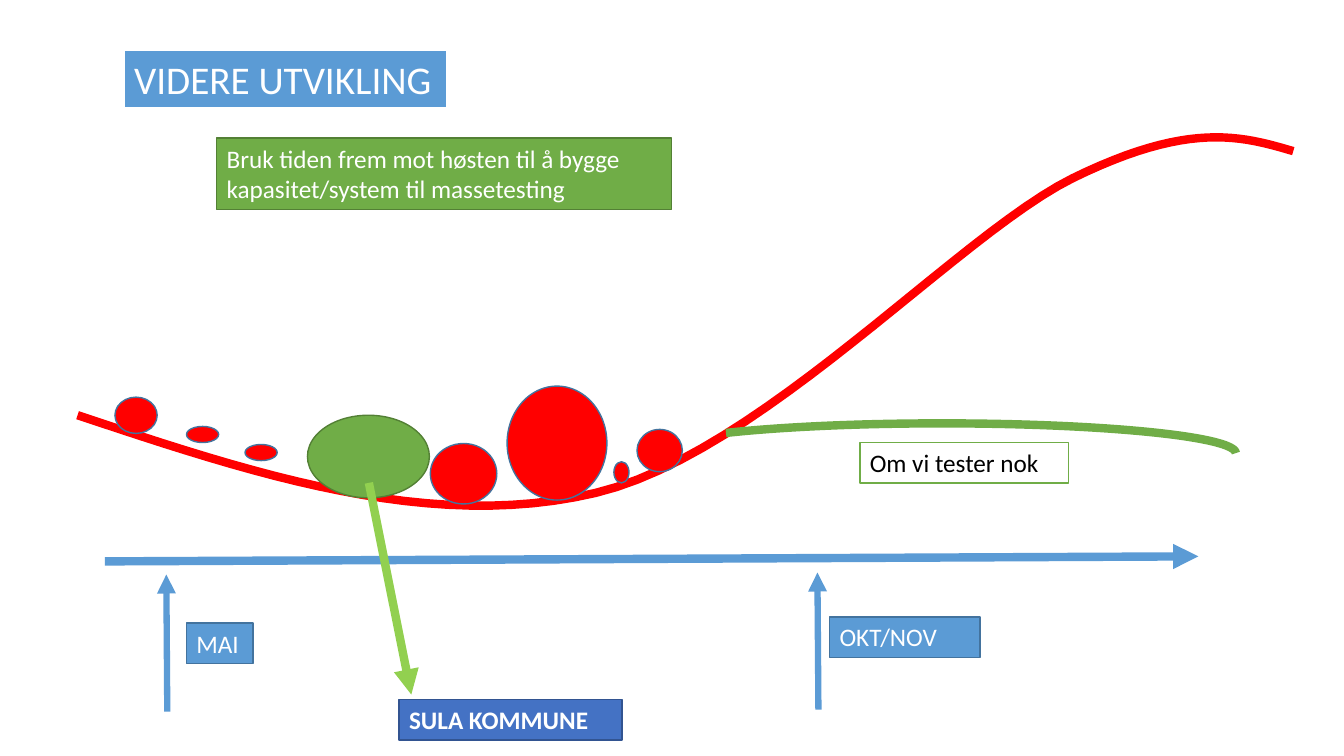
from dataclasses import dataclass

from lxml.etree import SubElement
from pptx import Presentation
from pptx.dml.color import RGBColor
from pptx.enum.shapes import MSO_CONNECTOR, MSO_SHAPE
from pptx.enum.text import MSO_ANCHOR, MSO_AUTO_SIZE, PP_ALIGN
from pptx.oxml.ns import qn
from pptx.util import Pt


@dataclass(frozen=True)
class Theme:
    font: str = "Calibri"
    title_size: float = 28
    label_size: float = 18
    white: str = "FFFFFF"
    black: str = "000000"
    blue: str = "5B9BD5"
    blue_edge: str = "43739E"
    green: str = "70AD47"
    green_edge: str = "538035"
    lime: str = "92D050"
    red: str = "FF0000"
    navy: str = "4472C4"
    navy_edge: str = "325491"
    thin: float = 1
    frame: float = 1.5
    medium: float = 4.5
    thick: float = 6


def bezier_point(start, first, second, end, t):
    weights = ((1 - t) ** 3, 3 * t * (1 - t) ** 2, 3 * t**2 * (1 - t), t**3)
    corners = (start, first, second, end)
    return tuple(Pt(sum(w * c[axis] for w, c in zip(weights, corners))) for axis in (0, 1))


class Page:
    def __init__(self, deck, theme):
        self.theme = theme
        self.slide = deck.slides.add_slide(deck.slide_layouts[5])
        self.shapes = self.slide.shapes

    def outline(self, item, color, width):
        item.line.color.rgb = RGBColor.from_string(color)
        item.line.width = Pt(width)

    def paint(self, shape, fill, edge, width):
        shape.shadow.inherit = False
        if fill:
            shape.fill.solid()
            shape.fill.fore_color.rgb = RGBColor.from_string(fill)
        else:
            shape.fill.background()
        self.outline(shape, edge, width)

    def set_text(self, shape, text, size, color, bold=False):
        frame = shape.text_frame
        frame.text = text
        frame.word_wrap = True
        frame.auto_size = MSO_AUTO_SIZE.NONE
        frame.vertical_anchor = MSO_ANCHOR.TOP
        para = frame.paragraphs[0]
        para.alignment = PP_ALIGN.LEFT
        para.line_spacing = 1.0
        para.font.name = self.theme.font
        para.font.size = Pt(size)
        para.font.bold = bold
        para.font.color.rgb = RGBColor.from_string(color)

    def title(self, text, left, top, width, height):
        box = self.shapes.title
        box.left, box.top, box.width, box.height = map(Pt, (left, top, width, height))
        theme = self.theme
        box.fill.solid()
        box.fill.fore_color.rgb = RGBColor.from_string(theme.blue)
        self.outline(box, theme.white, theme.frame)
        self.set_text(box, text, theme.title_size, theme.white)

    def label(self, text, bounds, fill, edge, color, bold=False):
        box = self.shapes.add_shape(MSO_SHAPE.RECTANGLE, *map(Pt, bounds))
        self.paint(box, fill, edge, self.theme.thin)
        self.set_text(box, text, self.theme.label_size, color, bold)

    def ellipse(self, bounds, fill, edge):
        oval = self.shapes.add_shape(MSO_SHAPE.OVAL, *map(Pt, bounds))
        self.paint(oval, fill, edge, self.theme.thin)

    def arrow(self, start, end, color, width):
        line = self.shapes.add_connector(MSO_CONNECTOR.STRAIGHT, *map(Pt, start + end))
        self.outline(line, color, width)
        SubElement(line.get_or_add_ln(), qn("a:tailEnd"), type="triangle")
        SubElement(line._element.spPr, qn("a:effectLst"))

    def curve(self, start, segments, color, width, steps=24):
        builder = self.shapes.build_freeform(*map(Pt, start))
        points = []
        for first, second, end in segments:
            points += [bezier_point(start, first, second, end, step / steps)
                       for step in range(1, steps + 1)]
            start = end
        builder.add_line_segments(points, close=False)
        self.paint(builder.convert_to_shape(), None, color, width)

    def arc(self, bounds, start_angle, color, width):
        arc = self.shapes.add_shape(MSO_SHAPE.ARC, *map(Pt, bounds))
        arc.adjustments[0] = start_angle
        arc.adjustments[1] = 0
        self.paint(arc, None, color, width)


def main():
    deck = Presentation()
    deck.slide_width, deck.slide_height = Pt(960), Pt(540)
    theme = Theme()
    page = Page(deck, theme)

    page.title("VIDERE UTVIKLING", 88.6, 36, 230.4, 41)
    page.arrow((74.9, 401), (856, 397.4), theme.blue, theme.thick)
    page.arrow((584.6, 506.9), (583.9, 409), theme.blue, theme.medium)
    page.arrow((119.5, 508.3), (118.8, 410.4), theme.blue, theme.medium)

    page.curve((55.4, 296.6), [
        ((180.7, 338.4), (306.7, 380.2), (425.5, 352.1)),
        ((543.6, 324), (683.3, 168.5), (766.1, 127.4)),
        ((849.6, 86.4), (887, 97.2), (923.8, 108)),
    ], theme.red, theme.thick)

    outbreaks = [
        (82.1, 283.7, 30.2, 25.9),
        (133.2, 304.6, 23, 11.5),
        (175, 317.5, 23, 11.5),
        (307.4, 316.8, 47.5, 43.2),
        (362.2, 275.8, 71.3, 81.4),
        (438.5, 329.8, 10.8, 15.1),
        (455, 306.7, 32.4, 30.2),
    ]
    for bounds in outbreaks:
        page.ellipse(bounds, theme.red, theme.blue_edge)
    page.ellipse((219.6, 296.6, 87.1, 59), theme.green, theme.green_edge)

    page.label("MAI", (133.2, 445, 47.5, 29), theme.blue, theme.blue_edge, theme.white)
    page.label("OKT/NOV", (592.6, 440.6, 107.3, 29), theme.blue, theme.blue_edge, theme.white)
    page.label("Bruk tiden frem mot høsten til å bygge kapasitet/system til massetesting",
               (154.8, 98.6, 324.7, 51), theme.green, theme.green_edge, theme.white)
    page.arrow((263.5, 344.9), (293.8, 496.1), theme.lime, theme.thick)
    page.label("SULA KOMMUNE", (285.1, 499.7, 159.1, 29),
               theme.navy, theme.navy_edge, theme.white, bold=True)
    page.arc((463, 302.4, 419.8, 42.5), 111.2, theme.green, theme.thick)
    page.label("Om vi tester nok", (614.2, 316.1, 149, 29), theme.white, theme.green, theme.black)

    deck.save("out.pptx")


if __name__ == "__main__":
    main()
